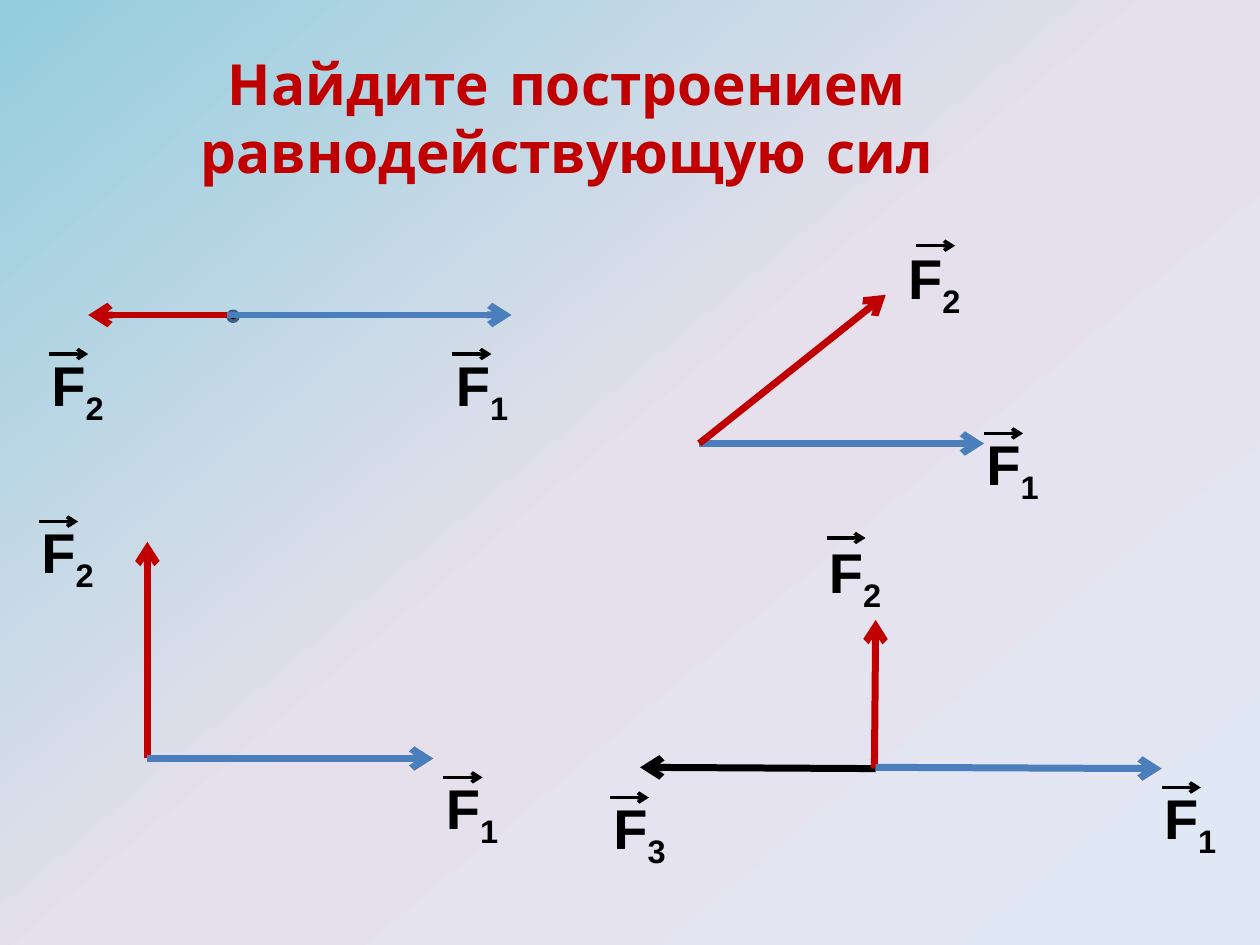
from copy import deepcopy

from pptx import Presentation
from pptx.dml.color import RGBColor
from pptx.enum.shapes import MSO_CONNECTOR as Connector, MSO_SHAPE as Shape
from pptx.enum.text import MSO_ANCHOR as Anchor, PP_ALIGN as Align
from pptx.oxml.ns import qn
from pptx.oxml.xmlchemy import OxmlElement
from pptx.util import Inches, Pt

WIDTH, HEIGHT = Inches(10), Inches(7.5)
COLUMN, ROW = WIDTH / 100, HEIGHT / 75

RED = RGBColor(0xC0, 0x00, 0x00)
BLUE = RGBColor(0x4B, 0x7E, 0xBC)
NAVY = RGBColor(0x3A, 0x5F, 0x8C)
BLACK = RGBColor(0x00, 0x00, 0x00)
SKY = RGBColor(0x93, 0xCD, 0xDD)
LILAC = RGBColor(0xE6, 0xE0, 0xEC)
MIST = RGBColor(0xE1, 0xE8, 0xF5)

FORCES = [
    ((55.5, 35.2), (78.1, 35.2), BLUE),
    ((55.5, 35.2), (70.3, 23.4), RED),
    ((69.5, 61), (50.8, 60.9), BLACK),
    ((69.4, 61), (69.5, 49.2), RED),
    ((69.5, 60.9), (92.2, 61), BLUE),
    ((11.7, 60.2), (11.7, 43), RED),
    ((11.7, 60.2), (34.4, 60.2), BLUE),
    ((18, 25), (40.6, 25), BLUE),
    ((18, 25), (7, 25), RED),
]

LABELS = [
    ("2", (3.1, 27.3), (3.9, 28.1)),
    ("1", (35.2, 27.3), (35.9, 28.1)),
    ("2", (2.3, 40.6), (3.1, 41.4)),
    ("1", (34.4, 60.9), (35.2, 61.7)),
    ("1", (77.3, 33.6), (78.1, 34.4)),
    ("2", (71.1, 18.8), (72.7, 19.5)),
    ("2", (64.8, 42.2), (65.6, 42.7)),
    ("1", (91.4, 61.7), (92.2, 62.5)),
    ("3", (47.7, 62.5), (48.4, 63.3)),
]


def place(col, row):
    """Turn grid columns and rows into slide lengths."""
    return round(col * COLUMN), round(row * ROW)


def paint_background(slide):
    """Fill the background with a slanted three-colour gradient."""
    fill = slide.background.fill
    fill.gradient()
    fill.gradient_angle = 310
    stop_list = slide._element.find(".//" + qn("a:gsLst"))
    stop_list.append(deepcopy(stop_list[-1]))
    for stop, color, position in zip(fill.gradient_stops, (SKY, LILAC, MIST), (0, 0.5, 1)):
        stop.color.rgb = color
        stop.position = position


def add_arrow(slide, start, end, color, weight):
    """Draw a straight arrow from start to end."""
    arrow = slide.shapes.add_connector(Connector.STRAIGHT, *place(*start), *place(*end))
    arrow.line.color.rgb = color
    arrow.line.width = Pt(weight)
    head = OxmlElement("a:tailEnd")
    head.set("type", "arrow")
    arrow.line._get_or_add_ln().append(head)
    arrow._element.spPr.append(OxmlElement("a:effectLst"))


def add_text_frame(slide, corner, size):
    """Add a wrapping text box and return its frame."""
    frame = slide.shapes.add_textbox(*place(*corner), *place(*size)).text_frame
    frame.word_wrap = True
    return frame


def add_run(paragraph, text, size, font, color):
    """Append a bold run and return it."""
    run = paragraph.add_run()
    run.text = text
    run.font.size = Pt(size)
    run.font.name = font
    run.font.bold = True
    run.font.color.rgb = color
    return run


def add_title(slide, text):
    """Write the centred task heading."""
    frame = add_text_frame(slide, (0, 3), (90, 12.5))
    frame.vertical_anchor = Anchor.MIDDLE
    heading = frame.paragraphs[0]
    heading.alignment = Align.CENTER
    add_run(heading, text, 32.4, "Comic Neue", RED)


def add_label(slide, index, corner, mark):
    """Write an indexed F with the vector mark above it."""
    symbol = add_text_frame(slide, corner, (8.6, 6.4)).paragraphs[0]
    add_run(symbol, "F", 32, "Arial", BLACK)
    subscript = add_run(symbol, index, 32, "Arial", BLACK)
    subscript.font._element.set("baseline", "-25000")
    add_arrow(slide, mark, (mark[0] + 3.1, mark[1]), BLACK, 2)


def add_origin(slide, corner):
    """Draw the point where two opposite forces act."""
    origin = slide.shapes.add_shape(Shape.OVAL, *place(*corner), *place(0.8, 0.8))
    origin.shadow.inherit = False
    origin.fill.solid()
    origin.fill.fore_color.rgb = BLACK
    origin.line.color.rgb = NAVY
    origin.line.width = Pt(2)


def main():
    """Build the slide on adding forces and save it."""
    deck = Presentation()
    deck.slide_width, deck.slide_height = WIDTH, HEIGHT
    slide = deck.slides.add_slide(deck.slide_layouts[6])
    paint_background(slide)
    add_title(slide, "Найдите построением равнодействующую сил")
    add_origin(slide, (18.1, 24.7))
    for start, end, color in FORCES:
        add_arrow(slide, start, end, color, 4)
    for index, corner, mark in LABELS:
        add_label(slide, index, corner, mark)
    deck.save("out.pptx")


if __name__ == "__main__":
    main()
